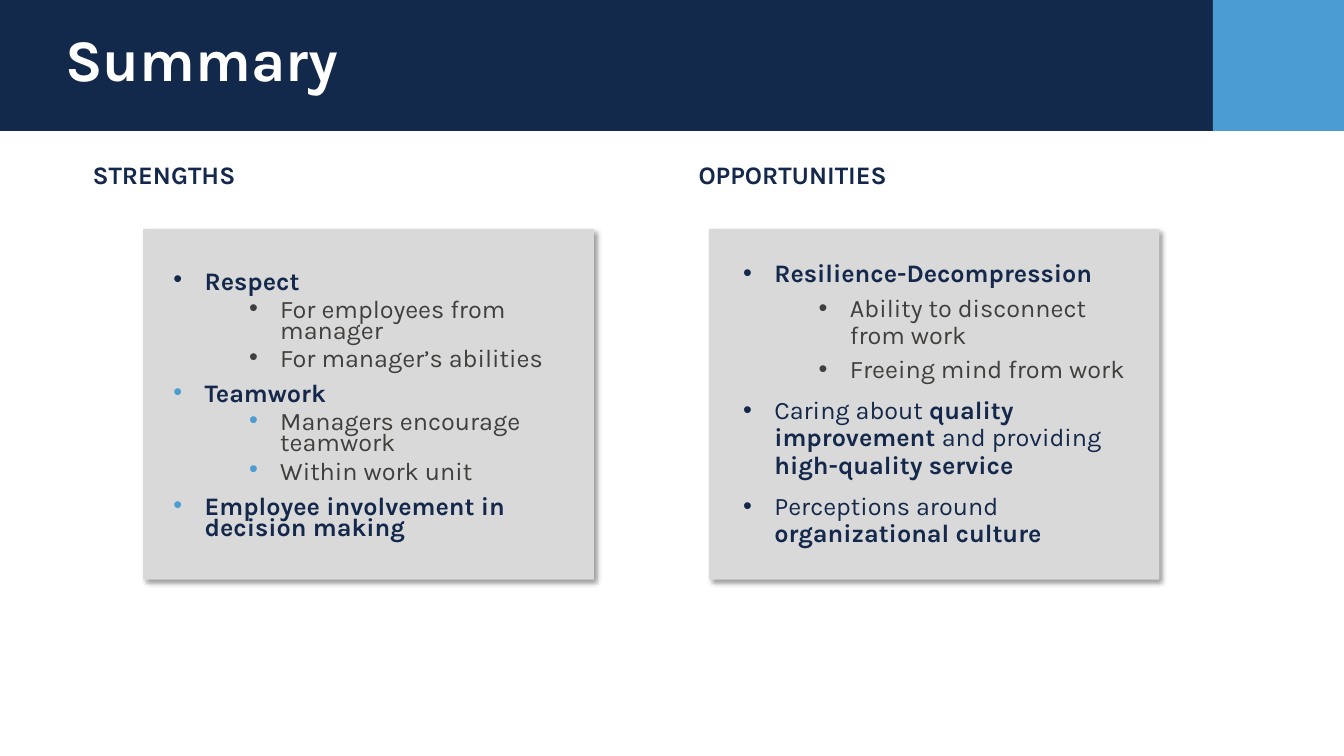
from lxml.etree import SubElement as Sub
from pptx import Presentation
from pptx.dml.color import RGBColor
from pptx.enum.shapes import MSO_SHAPE as Shape
from pptx.enum.text import MSO_ANCHOR as Anchor
from pptx.oxml.ns import qn
from pptx.util import Emu, Inches, Pt

WIDE, HIGH = 13.33, 7.5
BAND = 1.3
NAVY, BLUE, GREY, INK, WHITE = "13284B", "4B9CD3", "D9D9D9", "403F3D", "FFFFFF"

# Each item: level, bullet colour (None follows the text), runs of (text, bold)
STRONG = [
    (0, None, [("Respect", True)]),
    (1, None, [("For employees from manager", False)]),
    (1, None, [("For manager’s abilities", False)]),
    (0, BLUE, [("Teamwork", True)]),
    (1, BLUE, [("Managers encourage teamwork", False)]),
    (1, BLUE, [("Within work unit", False)]),
    (0, BLUE, [("Employee involvement in decision making", True)]),
]
CHANCE = [
    (0, None, [("Resilience-Decompression", True)]),
    (1, None, [("Ability to disconnect from work", False)]),
    (1, None, [("Freeing mind from work", False)]),
    (0, None, [("Caring about ", False), ("quality improvement ", True),
               ("and providing ", False), ("high-quality service", True)]),
    (0, None, [("Perceptions around ", False), ("organizational culture", True)]),
]


def color(code):
    return RGBColor.from_string(code)


def style(para, size, code, bold=None):
    font = para.font
    font.name, font.size, font.bold = "Karla", Pt(size), bold
    font.color.rgb = color(code)


def rect(slide, box, code):
    shape = slide.shapes.add_shape(Shape.RECTANGLE, *map(Inches, box))
    shape.shadow.inherit = False
    shape.fill.solid()
    shape.fill.fore_color.rgb = color(code)
    shape.line.fill.background()
    return shape


def frame(slide, box):
    text = slide.shapes.add_textbox(*map(Inches, box)).text_frame
    text.word_wrap = True
    return text


def label(slide, box, words, size, code):
    text = frame(slide, box)
    para = text.paragraphs[0]
    para.text = words
    style(para, size, code, True)
    return text


def shade(shape):
    """Cast a soft shadow to the lower right."""
    effect = shape._element.spPr.find(qn("a:effectLst"))
    outer = Sub(effect, qn("a:outerShdw"), blurRad=str(Pt(4)), dist=str(Pt(3)),
                dir=str(45 * 60000), algn="tl", rotWithShape="0")
    tone = Sub(outer, qn("a:srgbClr"), val="000000")
    Sub(tone, qn("a:alpha"), val="40000")


def bullet(para, level, code):
    para.level = level
    props = para._p.get_or_add_pPr()
    props.set("marL", str(Inches(0.31 + 0.75 * level)))
    props.set("indent", str(Inches(-0.31)))
    if code:
        Sub(Sub(props, qn("a:buClr")), qn("a:srgbClr"), val=code)
    Sub(props, qn("a:buFont"), typeface="Arial")
    Sub(props, qn("a:buChar"), char="•")


def points(slide, box, items, pitch):
    text = frame(slide, box)
    text.margin_left = text.margin_right = Emu(0)
    text.margin_top = text.margin_bottom = Emu(0)
    for i, (level, dot, runs) in enumerate(items):
        para = text.add_paragraph() if i else text.paragraphs[0]
        bullet(para, level, dot)
        para.line_spacing = pitch
        para.space_before = Pt((5 if level else 10) if i else 0)
        same = runs[0][1] if len(runs) == 1 else None
        style(para, 18, INK if level else NAVY, same)
        for words, bold in runs:
            run = para.add_run()
            run.text = words
            if same is None:
                run.font.bold = bold


def header(slide, box, words):
    left, top, width, height = box
    rect(slide, (left, top, width - height, height), "13294B")
    rect(slide, (left + width - height, top, height, height), BLUE)
    text = label(slide, (left + 0.55, top + 0.28, 10.68, 0.68), words, 42, WHITE)
    text.vertical_anchor = Anchor.MIDDLE
    text.paragraphs[0].line_spacing = 0.9


def panel(slide, box, title, shift, items, inset, pitch):
    """Draw a grey card with its heading above, moved left by shift."""
    left, top, width, height = box
    shade(rect(slide, box, GREY))
    label(slide, (left - shift, top - 0.74, 4.1, 0.42), title, 18, NAVY)
    dx, dy, wide = inset
    points(slide, (left + dx, top + dy, wide, height - dy), items, pitch)


def main():
    deck = Presentation()
    deck.slide_width, deck.slide_height = Inches(WIDE), Inches(HIGH)
    slide = deck.slides.add_slide(deck.slide_layouts[6])
    header(slide, (0, 0, WIDE, BAND), "Summary")
    panel(slide, (1.42, 2.27, 4.47, 3.48), "STRENGTHS", 0.6,
          STRONG, (0.3, 0.44, 3.86), 0.7)
    panel(slide, (7.03, 2.27, 4.47, 3.48), "OPPORTUNITIES", 0.2,
          CHANCE, (0.34, 0.32, 3.79), 0.9)
    deck.save("out.pptx")


if __name__ == "__main__":
    main()
